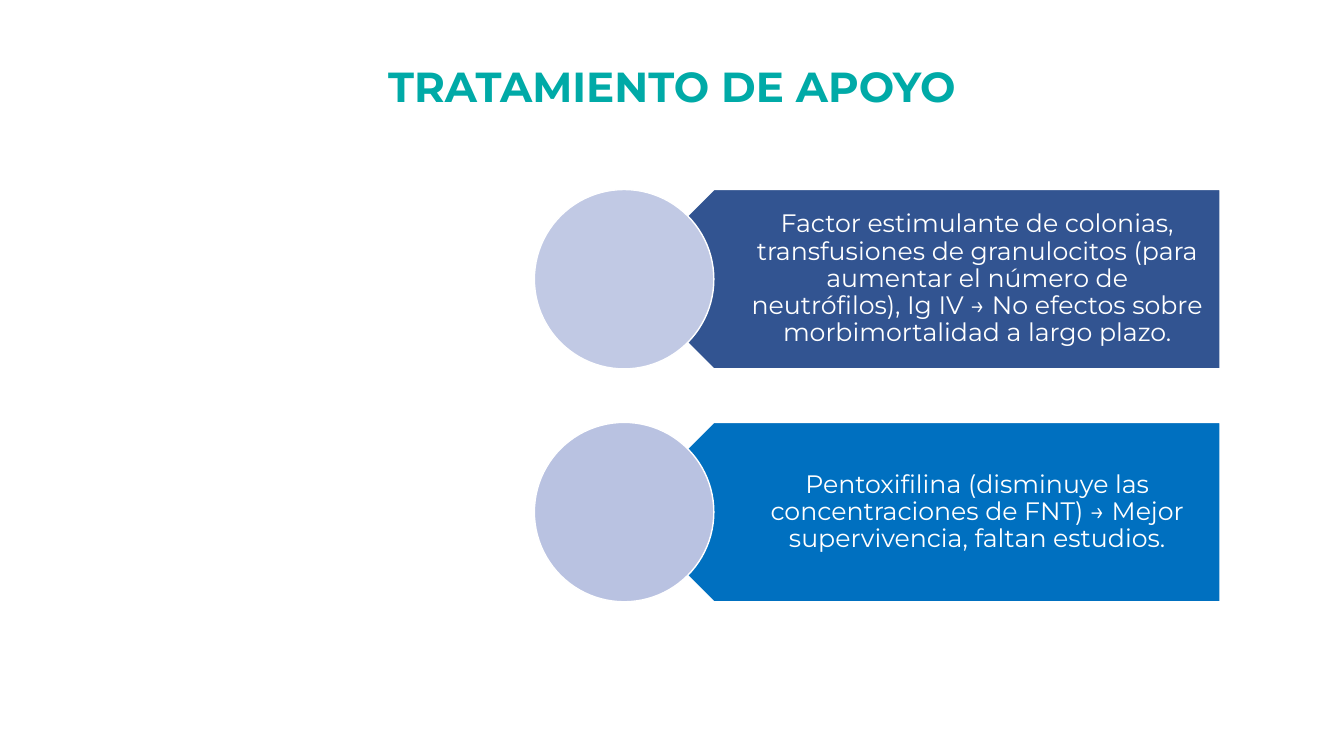
from pptx import Presentation
from pptx import util as u
from pptx.dml.color import RGBColor
from pptx.enum import shapes, text

WIDE, HIGH = 13.33, 7.5
FONT = "Montserrat"

deck = Presentation()
deck.slide_width, deck.slide_height = u.Inches(WIDE), u.Inches(HIGH)
slide = deck.slides.add_slide(deck.slide_layouts[5])


def write(para, words, size, tint, bold=False):
    para.alignment = text.PP_ALIGN.CENTER
    run = para.add_run()
    run.text = words
    run.font.name, run.font.size, run.font.bold = FONT, u.Pt(size), bold
    run.font.color.rgb = RGBColor.from_string(tint)


def draw(kind, left, top, wide, high, tint):
    form = slide.shapes.add_shape(
        kind, u.Inches(left), u.Inches(top), u.Inches(wide), u.Inches(high))
    form.shadow.inherit = False
    form.fill.solid()
    form.fill.fore_color.rgb = RGBColor.from_string(tint)
    form.line.color.rgb = RGBColor.from_string("FFFFFF")
    form.line.width = u.Pt(1)
    return form


# Title, centred on the slide
title = slide.shapes.title
wide = 6.22
title.left, title.top = u.Inches((WIDE - wide) / 2), u.Inches(0.55)
title.width, title.height = u.Inches(wide), u.Inches(0.61)
frame = title.text_frame
frame.auto_size = text.MSO_AUTO_SIZE.NONE
frame.vertical_anchor = text.MSO_ANCHOR.TOP
write(frame.paragraphs[0], "TRATAMIENTO DE APOYO", 30, "00AAA7", True)

# Grid: a circle overlaps the point of each banner
SIZE, STEP, TOP = 1.78, 2.31, 1.88
DISC, TIP, END = 5.3, 6.19, 12.1
BODY = TIP + SIZE / 4

rows = [
    ("Factor estimulante de colonias, transfusiones de granulocitos "
     "(para aumentar el número de neutrófilos), Ig IV → No efectos sobre "
     "morbimortalidad a largo plazo.", "325491", "C1C9E4"),
    ("Pentoxifilina (disminuye las concentraciones de FNT) → Mejor "
     "supervivencia, faltan estudios.", "0070C0", "B9C2E1"),
]

for row, (words, dark, pale) in enumerate(rows):
    top = TOP + row * STEP

    # Banner pointing left
    flag = draw(shapes.MSO_SHAPE.PENTAGON, TIP, top, END - TIP, SIZE, dark)
    flag.rotation = 180

    # Upright text over the banner
    box = slide.shapes.add_textbox(
        u.Inches(BODY), u.Inches(top), u.Inches(END - BODY), u.Inches(SIZE))
    frame = box.text_frame
    frame.word_wrap = True
    frame.vertical_anchor = text.MSO_ANCHOR.MIDDLE
    frame.margin_left, frame.margin_right = u.Inches(0.79), u.Inches(0.14)
    frame.margin_top = frame.margin_bottom = u.Inches(0.07)
    para = frame.paragraphs[0]
    para.line_spacing = 0.9
    write(para, words, 18, "FFFFFF")

    # Circle
    draw(shapes.MSO_SHAPE.OVAL, DISC, top, SIZE, SIZE, pale)

deck.save("out.pptx")
